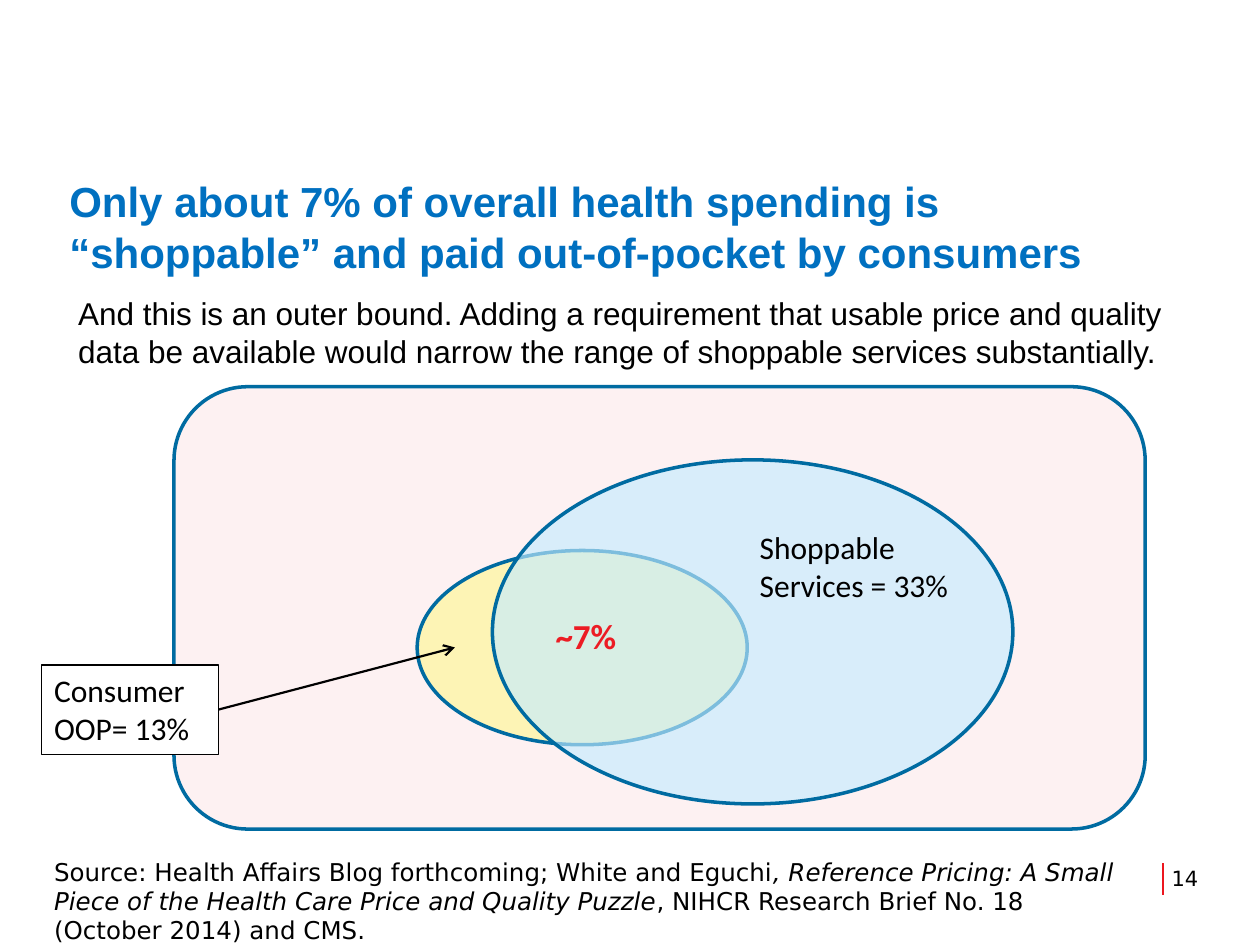
from lxml import etree
from pptx import Presentation
from pptx.dml.color import RGBColor
from pptx.enum import shapes, text
from pptx.oxml import ns
from pptx.util import Pt

HEX = {"title": "0070C0", "ink": "000000", "red": "EC1C24", "rule": "EC161F",
       "edge": "006BA1", "yellow": "FFFF00", "sky": "C4ECFF", "white": "FFFFFF"}
FORM = shapes.MSO_SHAPE
TIGHT = (0, 0, 7.2, 3.6)
LOOSE = (7.2, 3.6, 7.2, 3.6)


def color(name):
    return RGBColor.from_string(HEX[name])


def write(shape, runs, size=18, font="Calibri", ink="ink", bold=False,
          align=text.PP_ALIGN.LEFT, anchor=text.MSO_ANCHOR.TOP,
          inset=LOOSE, lead=None):
    frame = shape.text_frame
    frame.word_wrap = True
    frame.vertical_anchor = anchor
    (frame.margin_left, frame.margin_top,
     frame.margin_right, frame.margin_bottom) = map(Pt, inset)
    para = frame.paragraphs[0]
    para.alignment = align
    if lead:
        para.line_spacing = Pt(lead)
    for words, slant in ([(runs, False)] if isinstance(runs, str) else runs):
        run = para.add_run()
        run.text = words
        run.font.size = Pt(size)
        run.font.name = font
        run.font.bold = bold
        run.font.italic = slant
        run.font.color.rgb = color(ink)


def label(slide, box, runs, **style):
    write(slide.shapes.add_textbox(*map(Pt, box)), runs, **style)


def draw(slide, kind, box, fill, edge="edge", width=2, alpha=100):
    shape = slide.shapes.add_shape(kind, *map(Pt, box))
    shape.shadow.inherit = False
    shape.fill.solid()
    shape.fill.fore_color.rgb = color(fill)
    if alpha < 100:
        tint = shape.fill._xPr.find(".//" + ns.qn("a:srgbClr"))
        etree.SubElement(tint, ns.qn("a:alpha"), val=str(alpha * 1000))
    shape.line.color.rgb = color(edge)
    shape.line.width = Pt(width)
    return shape


def link(slide, start, end, ink, width, arrow=False):
    line = slide.shapes.add_connector(
        shapes.MSO_CONNECTOR.STRAIGHT, *map(Pt, start + end))
    line.line.color.rgb = color(ink)
    line.line.width = Pt(width)
    if arrow:
        etree.SubElement(line.line._get_or_add_ln(), ns.qn("a:tailEnd"), type="arrow")
    etree.SubElement(line._element.spPr, ns.qn("a:effectLst"))
    return line


def header(slide, box):
    x, y, w, h = box
    label(slide, (x, y, w, 67),
          "Only about 7% of overall health spending is “shoppable” "
          "and paid out-of-pocket by consumers",
          size=24, font="Arial", ink="title", bold=True, inset=TIGHT, lead=29)
    label(slide, (x + 5, y + 68, w + 9, h - 68),
          "And this is an outer bound. Adding a requirement that usable price "
          "and quality data be available would narrow the range of shoppable "
          "services substantially.", font="Arial", inset=TIGHT)


def venn(slide, box):
    x, y, w, h = box
    draw(slide, FORM.ROUNDED_RECTANGLE, box, "red", alpha=6)
    draw(slide, FORM.OVAL, (x + 139, y + 93.6, 188.6, 111), "yellow", alpha=25)
    draw(slide, FORM.OVAL, (x + 182, y + 41.8, 297.4, 196.6), "sky", alpha=64)
    label(slide, (x + 211, y + 126.8, 66, 32), "~7%", size=20, ink="red", bold=True)
    label(slide, (x + 327.6, y + 77, 132, 51), "Shoppable Services = 33%")
    note = draw(slide, FORM.RECTANGLE, (x - 75.6, y + 159, 101, 51),
                "white", edge="ink", width=0.75)
    write(note, "Consumer OOP= 13%")
    arrow = link(slide, (x + 25.4, y + 184.5), (x + 160.6, y + 149),
                 "ink", 1.25, arrow=True)
    arrow.begin_connect(note, 3)


def footer(slide, box):
    x, y, w, h = box
    label(slide, box, [
        ("Source: Health Affairs Blog forthcoming; White and Eguchi", False),
        (", Reference Pricing: A Small Piece of the Health Care Price "
         "and Quality Puzzle", True),
        (", NIHCR Research Brief No. 18 (October 2014) and CMS.", False)],
        size=14, font="DejaVu Sans")
    edge = x + w + 10.8
    link(slide, (edge, y + 7.2), (edge, y + 25.2), "rule", 1.5)
    label(slide, (edge - 0.8, y + 3, 28, 28.8), "14", size=12,
          font="DejaVu Sans", align=text.PP_ALIGN.RIGHT,
          anchor=text.MSO_ANCHOR.MIDDLE, inset=TIGHT)


def main():
    deck = Presentation()
    deck.slide_width, deck.slide_height = Pt(720), Pt(540)
    slide = deck.slides.add_slide(deck.slide_layouts[6])
    header(slide, (39.6, 100, 630, 120))
    venn(slide, (99.4, 221, 555, 252.8))
    footer(slide, (23.8, 486, 630, 58))
    deck.save("out.pptx")


if __name__ == "__main__":
    main()
